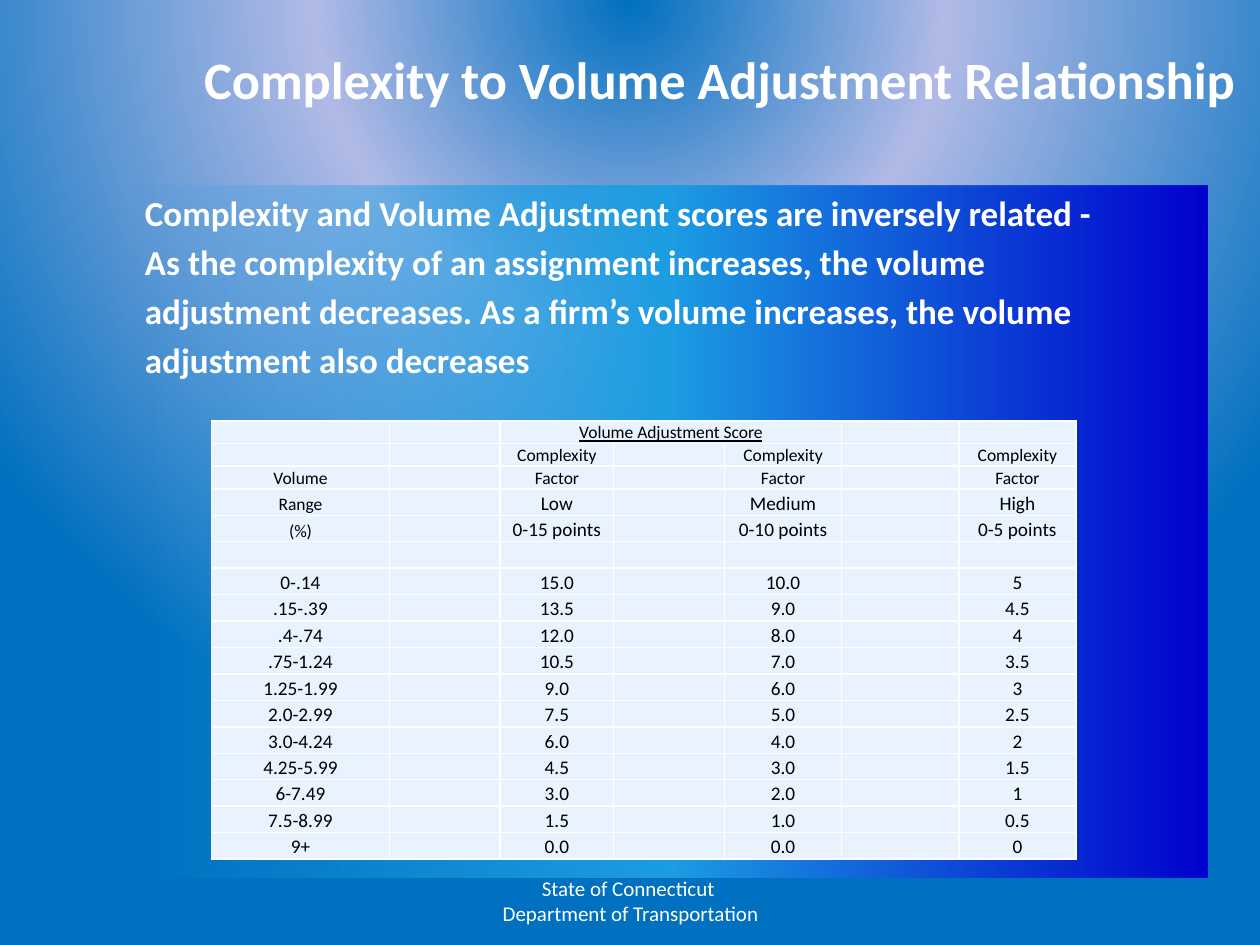
from typing import NamedTuple

import pptx
import pptx.dml.color
import pptx.enum.text
import pptx.oxml.ns
import pptx.util
from lxml import etree

Inches, Pt = pptx.util.Inches, pptx.util.Pt
PP_ALIGN, ANCHOR = pptx.enum.text.PP_ALIGN, pptx.enum.text.MSO_ANCHOR
qn = pptx.oxml.ns.qn
FONT = "Calibri"
COLORS = {
    "text": "FFFFFF", "table_text": "000000", "cell": "E8F3FF", "border": "FFFFFF",
    "blue": "0070C0", "lavender": "B1BAE6", "navy": "0000CC", "sky": "1C9DE2",
}


class Stop(NamedTuple):
    percent: int
    color: str
    alpha: int = 100


class Row(NamedTuple):
    volume: str = ""
    low: str = ""
    medium: str = ""
    high: str = ""
    height: float = 0.21
    volume_size: int = 11
    score_size: int = 11


BODY_LINES = [
    "Complexity and Volume Adjustment scores are inversely related -",
    "As the complexity of an assignment increases, the volume",
    "adjustment decreases. As a firm’s volume increases, the volume",
    "adjustment also decreases",
]
COLUMN_WIDTHS = [1.41, 0.88, 0.9, 0.88, 0.93, 0.93, 0.93]
ROWS = [
    Row("", "Volume Adjustment Score", height=0.18, volume_size=10, score_size=10),
    Row("", *["Complexity"] * 3, height=0.18, volume_size=10, score_size=10),
    Row("Volume", *["Factor"] * 3, height=0.18, volume_size=10, score_size=10),
    Row("Range", "Low", "Medium", "High", volume_size=10),
    Row("(%)", "0-15 points", "0-10 points", "0-5 points", volume_size=10),
    Row(),
    Row("0-.14", "15.0", "10.0", "5"),
    Row(".15-.39", "13.5", "9.0", "4.5"),
    Row(".4-.74", "12.0", "8.0", "4"),
    Row(".75-1.24", "10.5", "7.0", "3.5"),
    Row("1.25-1.99", "9.0", "6.0", "3"),
    Row("2.0-2.99", "7.5", "5.0", "2.5"),
    Row("3.0-4.24", "6.0", "4.0", "2"),
    Row("4.25-5.99", "4.5", "3.0", "1.5"),
    Row("6-7.49", "3.0", "2.0", "1"),
    Row("7.5-8.99", "1.5", "1.0", "0.5"),
    Row("9+", "0.0", "0.0", "0"),
]


def rgb(name: str) -> pptx.dml.color.RGBColor:
    return pptx.dml.color.RGBColor.from_string(COLORS[name])


def add_xml(parent, tag: str, **attributes):
    return etree.SubElement(parent, qn(tag), {k: str(v) for k, v in attributes.items()})


def place(shape, left: float, top: float, width: float, height: float) -> None:
    shape.left, shape.top = Inches(left), Inches(top)
    shape.width, shape.height = Inches(width), Inches(height)


def format_runs(p, size: int, color: str = "text", bold: bool = False) -> None:
    for r in p.runs:
        r.font.name, r.font.size, r.font.bold = FONT, Pt(size), bold
        r.font.color.rgb = rgb(color)


def set_stops(element, stops: list[Stop]):
    """Empty the first gradient in element, give it new stops and return it."""
    gradient = next(element.iter(qn("a:gradFill")))
    for child in list(gradient):
        gradient.remove(child)
    stop_list = add_xml(gradient, "a:gsLst")
    for stop in stops:
        gs = add_xml(stop_list, "a:gs", pos=stop.percent * 1000)
        color = add_xml(gs, "a:srgbClr", val=COLORS[stop.color])
        if stop.alpha < 100:
            add_xml(color, "a:alpha", val=stop.alpha * 1000)
    return gradient


def fill_background(s) -> None:
    s.background.fill.gradient()
    gradient = set_stops(s.element, [Stop(0, "blue"), Stop(40, "lavender"), Stop(100, "blue")])
    circle = add_xml(gradient, "a:path", path="circle")
    add_xml(circle, "a:fillToRect", l=50000, t=-80000, r=50000, b=180000)


def add_title(s) -> None:
    title = s.shapes.title
    place(title, 0.5, 0.3, 9.41, 0.64)
    tf = title.text_frame
    tf.text = "Complexity to Volume Adjustment Relationship"
    tf.auto_size = pptx.enum.text.MSO_AUTO_SIZE.NONE
    tf.vertical_anchor = ANCHOR.MIDDLE
    tf.paragraphs[0].alignment = PP_ALIGN.RIGHT
    format_runs(tf.paragraphs[0], 30, bold=True)


def add_body(s) -> None:
    body = s.placeholders[1]
    place(body, 1.05, 1.47, 8.53, 5.49)
    body.fill.gradient()
    gradient = set_stops(body.element, [Stop(0, "navy"), Stop(50, "sky"), Stop(100, "sky", 0)])
    add_xml(gradient, "a:lin", ang=180 * 60000, scaled=0)
    tf = body.text_frame
    tf.text = "\n".join(BODY_LINES)
    tf.auto_size = pptx.enum.text.MSO_AUTO_SIZE.NONE
    for i, p in enumerate(tf.paragraphs):
        p.space_before = Pt(4 if i else 0)
        properties = p._p.get_or_add_pPr()
        properties.set("marL", str(Inches(0.38)))
        properties.set("indent", str(Inches(-0.38)))
        add_xml(properties, "a:buNone")
        format_runs(p, 20, bold=True)


def add_footer(s) -> None:
    box = s.shapes.add_textbox(Inches(3.42), Inches(6.95), Inches(3.17), Inches(0.4))
    tf = box.text_frame
    tf.word_wrap = True
    tf.vertical_anchor = ANCHOR.MIDDLE
    p = tf.paragraphs[0]
    p.text = "State of Connecticut \vDepartment of Transportation"
    p.alignment = PP_ALIGN.CENTER
    format_runs(p, 12)


def format_cell(cell, text: str, size: int) -> None:
    cell.margin_left = cell.margin_right = cell.margin_top = Inches(0.01)
    cell.margin_bottom = 0
    cell.vertical_anchor = ANCHOR.BOTTOM
    for side in "LRTB":
        line = add_xml(cell._tc.get_or_add_tcPr(), f"a:ln{side}", w=Pt(1))
        add_xml(add_xml(line, "a:solidFill"), "a:srgbClr", val=COLORS["border"])
    cell.fill.solid()
    cell.fill.fore_color.rgb = rgb("cell")
    p = cell.text_frame.paragraphs[0]
    p.text = text
    p.alignment = PP_ALIGN.CENTER
    format_runs(p, size, "table_text")
    if not text:
        add_xml(p._p, "a:endParaRPr", sz=size * 100)


def add_score_table(s) -> None:
    frame = s.shapes.add_table(
        len(ROWS), len(COLUMN_WIDTHS), Inches(1.68), Inches(3.34),
        Inches(sum(COLUMN_WIDTHS)), Inches(sum(row.height for row in ROWS)))
    table = frame.table
    table.first_row = table.horz_banding = False
    for column, width in zip(table.columns, COLUMN_WIDTHS):
        column.width = Inches(width)
    for i, row in enumerate(ROWS):
        table.rows[i].height = Inches(row.height)
        texts = [row.volume, "", row.low, "", row.medium, "", row.high]
        for j, text in enumerate(texts):
            format_cell(table.cell(i, j), text, row.score_size if j else row.volume_size)
    heading = table.cell(0, 2)
    heading.merge(table.cell(0, 4))
    heading.text_frame.paragraphs[0].runs[0].font.underline = True


def main() -> None:
    prs = pptx.Presentation()
    prs.slide_width, prs.slide_height = Inches(10), Inches(7.5)
    s = prs.slides.add_slide(prs.slide_layouts[1])
    fill_background(s)
    add_title(s)
    add_footer(s)
    add_body(s)
    add_score_table(s)
    prs.save("out.pptx")


if __name__ == "__main__":
    main()
